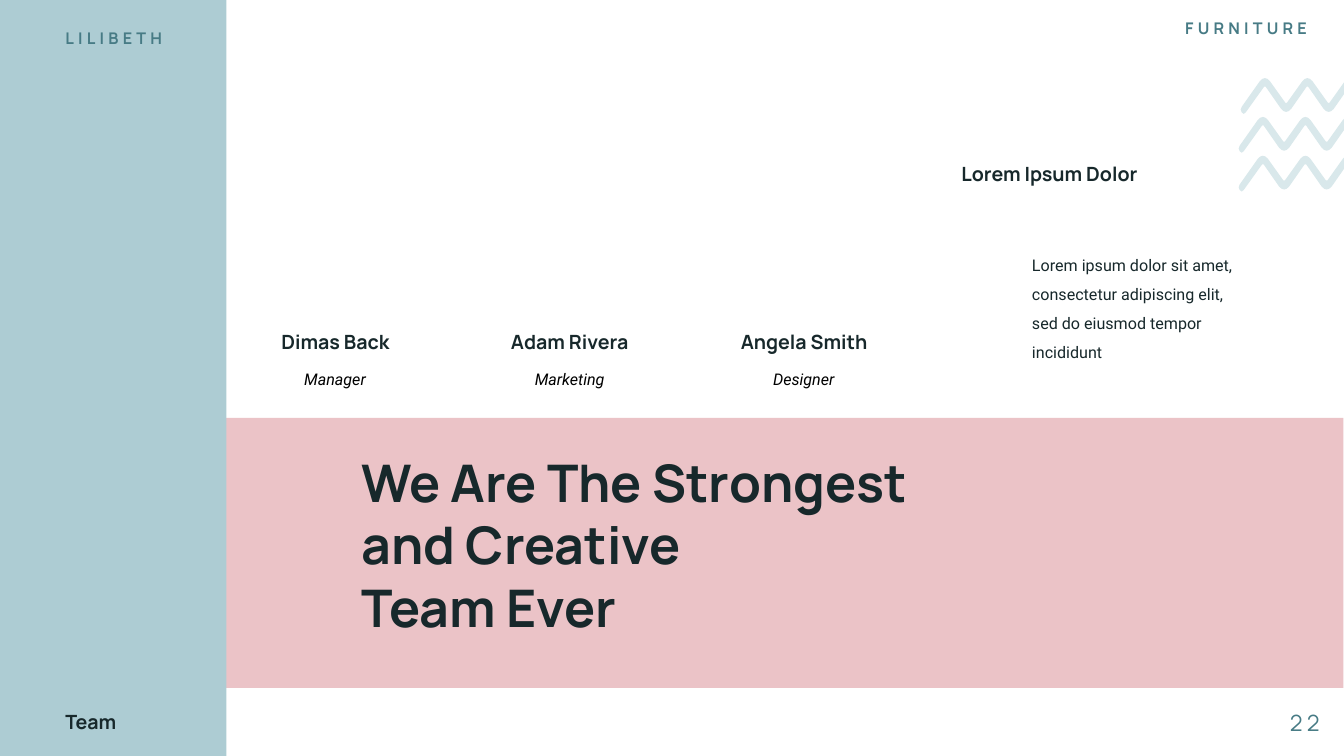
"""Build the team slide with its side panel, title band, members and wave ornament."""
from lxml import etree
from pptx import Presentation
from pptx import util as u
from pptx.dml.color import RGBColor
from pptx.enum import shapes, text
from pptx.oxml import ns

PX = u.Inches(1) // 100
WIDTH, HEIGHT = 2667, 1500

BLUE = RGBColor(0xAD, 0xCC, 0xD3)
PINK = RGBColor(0xEB, 0xC3, 0xC7)
PALE = RGBColor(0xD9, 0xE8, 0xEB)
TEAL = RGBColor(0x47, 0x7B, 0x85)
DARK = RGBColor(0x17, 0x28, 0x2B)
BLACK = RGBColor(0, 0, 0)

HEADING = dict(size=28, bold=True)
LABEL = dict(size=23, bold=True, color=TEAL, tracking=6)
ROLE = dict(size=23, font="Roboto", color=BLACK, italic=True)

MEMBERS = [
    ("Dimas Back", 241, "Manager", 144),
    ("Adam Rivera", 261, "Marketing", 161),
    ("Angela Smith", 279, "Designer", 144),
]
FIRST_CENTER, MEMBER_PITCH = 665, 465

PEAKS, PERIOD, WAVE_WIDTH = 4, 84.4, 349
WAVE_ORIGINS = [(2458, 309), (2458, 232), (2462, 155)]


def paint(shape, color):
    """Give a shape a plain fill without line or shadow."""
    shape.fill.solid()
    shape.fill.fore_color.rgb = color
    shape.line.fill.background()
    shape.shadow.inherit = False


def add_block(slide, left, top, width, height, color):
    """Add a plain rectangle."""
    block = slide.shapes.add_shape(
        shapes.MSO_SHAPE.RECTANGLE, left * PX, top * PX, width * PX, height * PX)
    paint(block, color)


def add_text(slide, wording, left, top, width, height, *, size, font="Manrope",
             color=DARK, bold=False, italic=False, tracking=0, align=None,
             spacing=None, wrap=False):
    """Add a text box with one paragraph for each line of the wording."""
    box = slide.shapes.add_textbox(left * PX, top * PX, width * PX, height * PX)
    frame = box.text_frame
    frame.text = wording
    frame.word_wrap = wrap
    frame.auto_size = text.MSO_AUTO_SIZE.SHAPE_TO_FIT_TEXT
    for paragraph in frame.paragraphs:
        paragraph.alignment = align
        paragraph.line_spacing = spacing
        for run in paragraph.runs:
            run.font.name = font
            run.font.size = u.Pt(size)
            run.font.bold = bold
            run.font.italic = italic
            run.font.color.rgb = color
            if tracking:
                run.font._element.set("spc", str(tracking * 100))


def add_member(slide, center, name, name_width, role, role_width):
    """Add a member's name and role, centred on one axis."""
    middle = text.PP_ALIGN.CENTER
    add_text(slide, name, center - name_width // 2, 649, name_width, 57,
             align=middle, **HEADING)
    add_text(slide, role, center - role_width // 2, 729, role_width, 49,
             align=middle, **ROLE)


def bend(center, half, base, crest):
    """Return start, middle and end of one rounded turn of the wave."""
    return [(center - half, base), (center, crest), (center + half, base)]


def wave_outline():
    """Return the turns of one closed wave as point triples from its corner."""
    upper, lower = [], []
    for index in range(PEAKS):
        peak = 48 + index * PERIOD
        upper += bend(peak, 10, 6, 0)
        lower += bend(peak, 1.5, 17, 16)
        if index < PEAKS - 1:
            valley = peak + PERIOD / 2
            upper += bend(valley, 1.5, 49, 50)
            lower += bend(valley, 10, 61, 67)
    left_cap = [(10, 68), (6, 71), (2, 68), (2, 68), (0, 62.5), (2, 57)]
    right_cap = [(WAVE_WIDTH - x, y) for x, y in reversed(left_cap)]
    return upper + right_cap + lower[::-1] + left_cap


def round_turns(wave):
    """Turn each start, middle and end triple of an outline into a curve."""
    points = list(wave._element.iter(ns.qn("a:pt")))
    for start, middle, end in zip(points[::3], points[1::3], points[2::3]):
        for axis in ("x", "y"):
            ends = int(start.get(axis)) + int(end.get(axis))
            middle.set(axis, str(2 * int(middle.get(axis)) - ends // 2))
        straight, spare = middle.getparent(), end.getparent()
        curve = etree.Element(ns.qn("a:quadBezTo"))
        straight.getparent().replace(straight, curve)
        spare.getparent().remove(spare)
        curve.extend([middle, end])


def add_waves(slide):
    """Add the group of stacked waves at the right edge."""
    group = slide.shapes.add_group_shape()
    outline = wave_outline()
    for left, top in WAVE_ORIGINS:
        points = [(round((left + x) * PX), round((top + y) * PX)) for x, y in outline]
        builder = group.shapes.build_freeform(*points[0])
        builder.add_line_segments(points[1:], close=False)
        builder.add_line_segments([], close=True)
        wave = builder.convert_to_shape()
        round_turns(wave)
        paint(wave, PALE)


def main():
    """Build and save the slide."""
    deck = Presentation()
    deck.slide_width, deck.slide_height = WIDTH * PX, HEIGHT * PX
    slide = deck.slides.add_slide(deck.slide_layouts[6])

    add_block(slide, 0, 829, 2666, 536, PINK)
    add_block(slide, 0, 0, 449, HEIGHT, BLUE)

    add_text(slide, "We Are The Strongest\nand Creative\nTeam Ever",
             708, 890, 1158, 384, size=74, bold=True)
    add_text(slide, "Team", 120, 1403, 127, 57, **HEADING)
    add_text(slide, "LILIBETH", 120, 51, 223, 49, **LABEL)
    add_text(slide, "22", 2550, 1403, 109, 64,
             size=32, color=TEAL, tracking=6, wrap=True)
    add_text(slide, "FURNITURE", 2342, 31, 275, 49, **LABEL)

    for index, member in enumerate(MEMBERS):
        add_member(slide, FIRST_CENTER + index * MEMBER_PITCH, *member)

    add_text(slide, "Lorem ipsum dolor sit amet, consectetur adipiscing elit, "
             "sed do eiusmod tempor incididunt", 2038, 483, 441, 236,
             size=23, font="Roboto", spacing=1.5, wrap=True)
    add_text(slide, "Lorem Ipsum Dolor", 1898, 316, 381, 57, **HEADING)
    add_waves(slide)

    deck.save("out.pptx")


if __name__ == "__main__":
    main()
